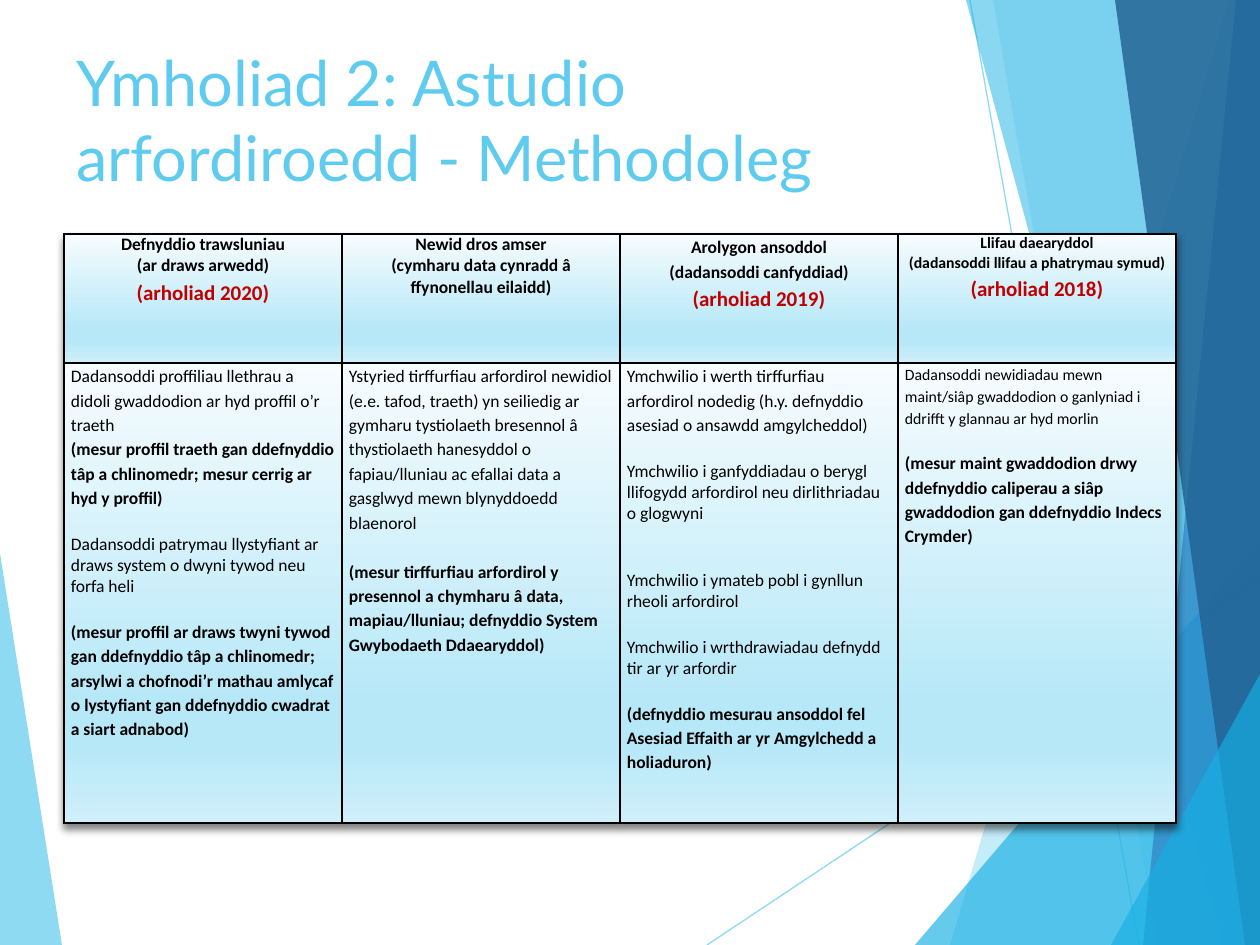
from pptx import Presentation
from pptx.dml.color import RGBColor
from pptx.enum.shapes import MSO_CONNECTOR
from pptx.enum.text import MSO_ANCHOR, MSO_AUTO_SIZE, PP_ALIGN
from pptx.oxml import parse_xml
from pptx.oxml.ns import nsdecls, qn
from pptx.oxml.xmlchemy import OxmlElement
from pptx.util import Emu, Pt

W, H = 1260, 945
SCALE = 914400 / 126
SKY, CYAN, BLUE, NAVY = "5FCBEF", "17B0E4", "2E83C3", "226292"
CELL_STOPS = [(0, "F7FCFE"), (74, "B7E8F8"), (83, "B7E8F8"), (100, "CFEFFA")]

WIDE = {"line_spacing": 1.15}
BOLD = {"bold": True}
SMALL = {"size": Pt(9)}
EXAM = {**WIDE, **BOLD, "size": Pt(12), "color": "C00000"}
NOTE = {**WIDE, **BOLD}


def px(n):
    return Emu(round(n * SCALE))


def rgb(value):
    return RGBColor.from_string(value)


def gap(points):
    return {"space_before": Pt(points)}


class Deck:
    """Holds the style and the current slide, and draws each kind of element."""

    def __init__(self):
        self.prs = Presentation()
        self.prs.slide_width, self.prs.slide_height = px(W), px(H)
        self.s = self.prs.slides.add_slide(self.prs.slide_layouts[5])
        self.body = {"size": Pt(10), "name": "Calibri", "bold": False, "color": "000000"}

    def add_text(self, p, text, style):
        r = p.add_run()
        r.text = text
        for key, value in style.items():
            if key == "color":
                r.font.color.rgb = rgb(value)
            elif key in ("alignment", "line_spacing", "space_before"):
                setattr(p, key, value)
            else:
                setattr(r.font, key, value)

    def fade(self, sp, alpha):
        for clr in sp._element.spPr.iter(qn("a:srgbClr")):
            node = OxmlElement("a:alpha")
            node.set("val", str(alpha * 1000))
            clr.append(node)

    def title(self, text, x, y, w, h):
        sp = self.s.shapes.title
        sp.left, sp.top, sp.width, sp.height = map(px, (x, y, w, h))
        tf = sp.text_frame
        frame = {"word_wrap": True, "auto_size": MSO_AUTO_SIZE.NONE,
                 "vertical_anchor": MSO_ANCHOR.TOP}
        for key, value in frame.items():
            setattr(tf, key, value)
        p = tf.paragraphs[0]
        self.add_text(p, text, {"alignment": PP_ALIGN.LEFT, "size": Pt(36),
                                "name": "Lato", "color": SKY})

    def polygon(self, points, color, alpha):
        builder = self.s.shapes.build_freeform(*points[0], scale=SCALE)
        builder.add_line_segments(points[1:], close=True)
        sp = builder.convert_to_shape()
        sp.shadow.inherit = False
        sp.fill.solid()
        sp.fill.fore_color.rgb = rgb(color)
        sp.line.fill.background()
        self.fade(sp, alpha)

    def band(self, top, bottom, color, alpha):
        self.polygon([(top, 0), (bottom, H), (W, H), (W, 0)], color, alpha)

    def line(self, x1, y1, x2, y2, color, alpha):
        sp = self.s.shapes.add_connector(MSO_CONNECTOR.STRAIGHT, *map(px, (x1, y1, x2, y2)))
        sp.line.width = Pt(0.75)
        sp.line.color.rgb = rgb(color)
        sp._element.spPr.append(OxmlElement("a:effectLst"))
        self.fade(sp, alpha)

    def paint(self, cell):
        tcPr = cell._tc.get_or_add_tcPr()
        for side in ("lnL", "lnR", "lnT", "lnB"):
            tcPr.append(parse_xml(
                f'<a:{side} {nsdecls("a")} w="12700"><a:solidFill>'
                f'<a:srgbClr val="000000"/></a:solidFill></a:{side}>'))
        stops = "".join(f'<a:gs pos="{pos * 1000}"><a:srgbClr val="{color}"/></a:gs>'
                        for pos, color in CELL_STOPS)
        tcPr.append(parse_xml(
            f'<a:gradFill {nsdecls("a")} rotWithShape="1"><a:gsLst>{stops}</a:gsLst>'
            '<a:lin ang="5400000" scaled="0"/></a:gradFill>'))

    def table(self, x, y, col_width, heights, rows):
        shape = self.s.shapes.add_table(len(rows), len(rows[0]), px(x), px(y),
                                        px(col_width * len(rows[0])), px(sum(heights)))
        table = shape.table
        table.horz_banding = False
        table._tbl.tblPr.insert(0, parse_xml(
            f'<a:effectLst {nsdecls("a")}><a:outerShdw blurRad="50800" dist="38100" '
            'dir="5400000" rotWithShape="0"><a:srgbClr val="000000">'
            '<a:alpha val="50000"/></a:srgbClr></a:outerShdw></a:effectLst>'))
        for col in table.columns:
            col.width = px(col_width)
        margins = {"margin_left": px(7), "margin_right": px(7),
                   "margin_top": 0, "margin_bottom": 0}
        for i, row in enumerate(rows):
            table.rows[i].height = px(heights[i])
            align = PP_ALIGN.LEFT if i else PP_ALIGN.CENTER
            for j, paragraphs in enumerate(row):
                cell = table.cell(i, j)
                for key, value in margins.items():
                    setattr(cell, key, value)
                self.paint(cell)
                tf = cell.text_frame
                for n, (text, style) in enumerate(paragraphs):
                    p = tf.add_paragraph() if n else tf.paragraphs[0]
                    self.add_text(p, text, {**self.body, "alignment": align, **style})


HEADINGS = [
    [("Defnyddio trawsluniau", BOLD),
     ("(ar draws arwedd)", BOLD),
     ("(arholiad 2020)", EXAM)],
    [("Newid dros amser", BOLD),
     ("(cymharu data cynradd â ffynonellau eilaidd)", BOLD)],
    [("Arolygon ansoddol", NOTE),
     ("(dadansoddi canfyddiad)", NOTE),
     ("(arholiad 2019)", EXAM)],
    [("Llifau daearyddol", {**BOLD, **SMALL}),
     ("(dadansoddi llifau a phatrymau symud)", {**BOLD, **SMALL}),
     ("(arholiad 2018)", EXAM)],
]
METHODS = [
    [("Dadansoddi proffiliau llethrau a didoli gwaddodion ar hyd proffil o’r traeth", WIDE),
     ("(mesur proffil traeth gan ddefnyddio tâp a chlinomedr; mesur cerrig ar hyd y proffil)",
      NOTE),
     ("Dadansoddi patrymau llystyfiant ar draws system o dwyni tywod neu forfa heli", gap(14)),
     ("(mesur proffil ar draws twyni tywod gan ddefnyddio tâp a chlinomedr; arsylwi a "
      "chofnodi’r mathau amlycaf o lystyfiant gan ddefnyddio cwadrat a siart adnabod)",
      {**NOTE, **gap(12)})],
    [("Ystyried tirffurfiau arfordirol newidiol (e.e. tafod, traeth) yn seiliedig ar gymharu "
      "tystiolaeth bresennol â thystiolaeth hanesyddol o fapiau/lluniau ac efallai data a "
      "gasglwyd mewn blynyddoedd blaenorol", WIDE),
     ("(mesur tirffurfiau arfordirol y presennol a chymharu â data, mapiau/lluniau; "
      "defnyddio System Gwybodaeth Ddaearyddol)", {**NOTE, **gap(14)})],
    [("Ymchwilio i werth tirffurfiau arfordirol nodedig (h.y. defnyddio asesiad o ansawdd "
      "amgylcheddol)", WIDE),
     ("Ymchwilio i ganfyddiadau o berygl llifogydd arfordirol neu dirlithriadau o glogwyni",
      gap(14)),
     ("Ymchwilio i ymateb pobl i gynllun rheoli arfordirol", gap(26)),
     ("Ymchwilio i wrthdrawiadau defnydd tir ar yr arfordir", gap(14)),
     ("(defnyddio mesurau ansoddol fel Asesiad Effaith ar yr Amgylchedd a holiaduron)",
      {**NOTE, **gap(12)})],
    [("Dadansoddi newidiadau mewn maint/siâp gwaddodion o ganlyniad i ddrifft y glannau ar "
      "hyd morlin", {**WIDE, **SMALL}),
     ("(mesur maint gwaddodion drwy ddefnyddio caliperau a siâp gwaddodion gan ddefnyddio "
      "Indecs Crymder)", {**NOTE, **gap(12)})],
]


def main():
    deck = Deck()
    deck.title("Ymholiad 2: Astudio arfordiroedd - Methodoleg", 64, 37, 922, 181)
    deck.polygon([(0, 553), (62, H), (0, H)], SKY, 70)
    deck.line(707, H, W, 577, SKY, 70)
    deck.line(970, 0, 1139, H, SKY, 70)
    deck.band(1229, 950, SKY, 36)
    deck.band(993, 1158, SKY, 20)
    deck.polygon([(915, H), (W, 541), (W, H)], CYAN, 66)
    deck.band(966, 1222, CYAN, 50)
    deck.band(1236, 1143, BLUE, 70)
    deck.band(1115, 1245, NAVY, 82)
    deck.polygon([(1111, H), (W, 674), (W, H)], CYAN, 66)
    deck.table(64, 234, 278, [129, 460], [HEADINGS, METHODS])
    deck.prs.save("out.pptx")


if __name__ == "__main__":
    main()
